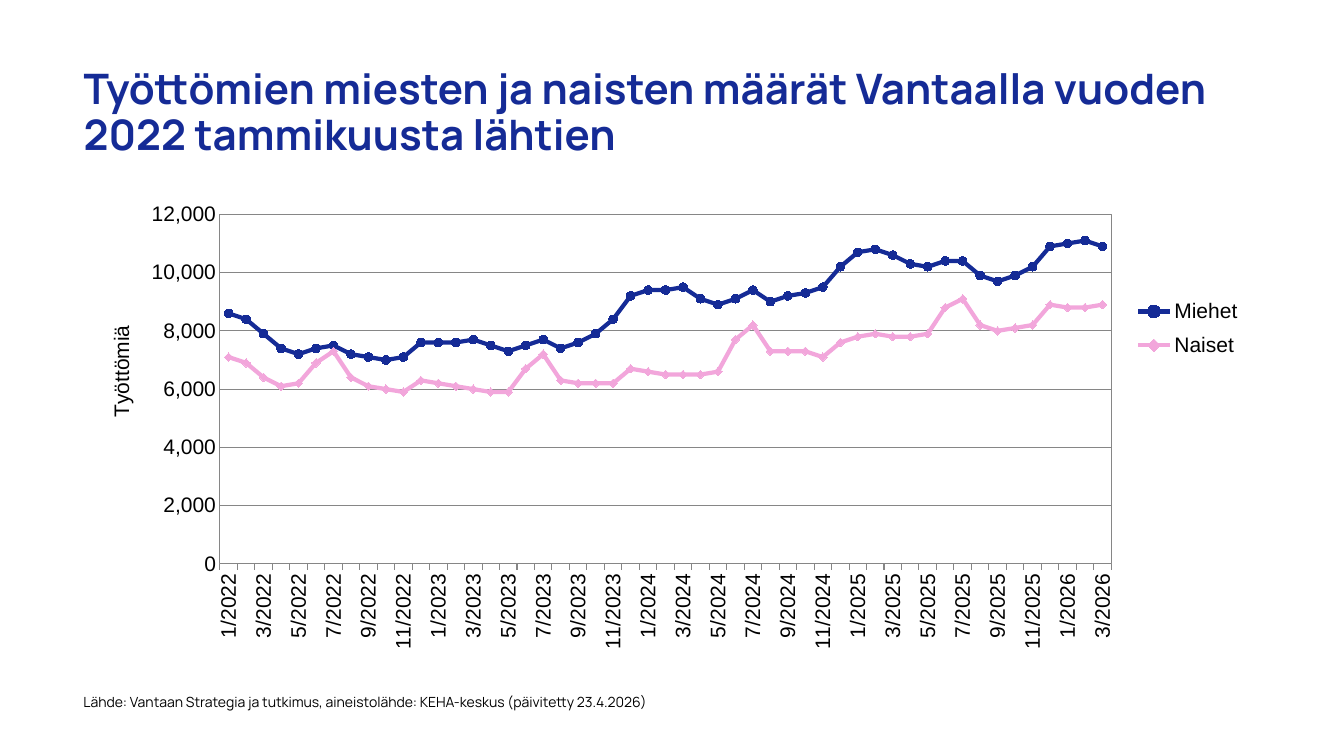
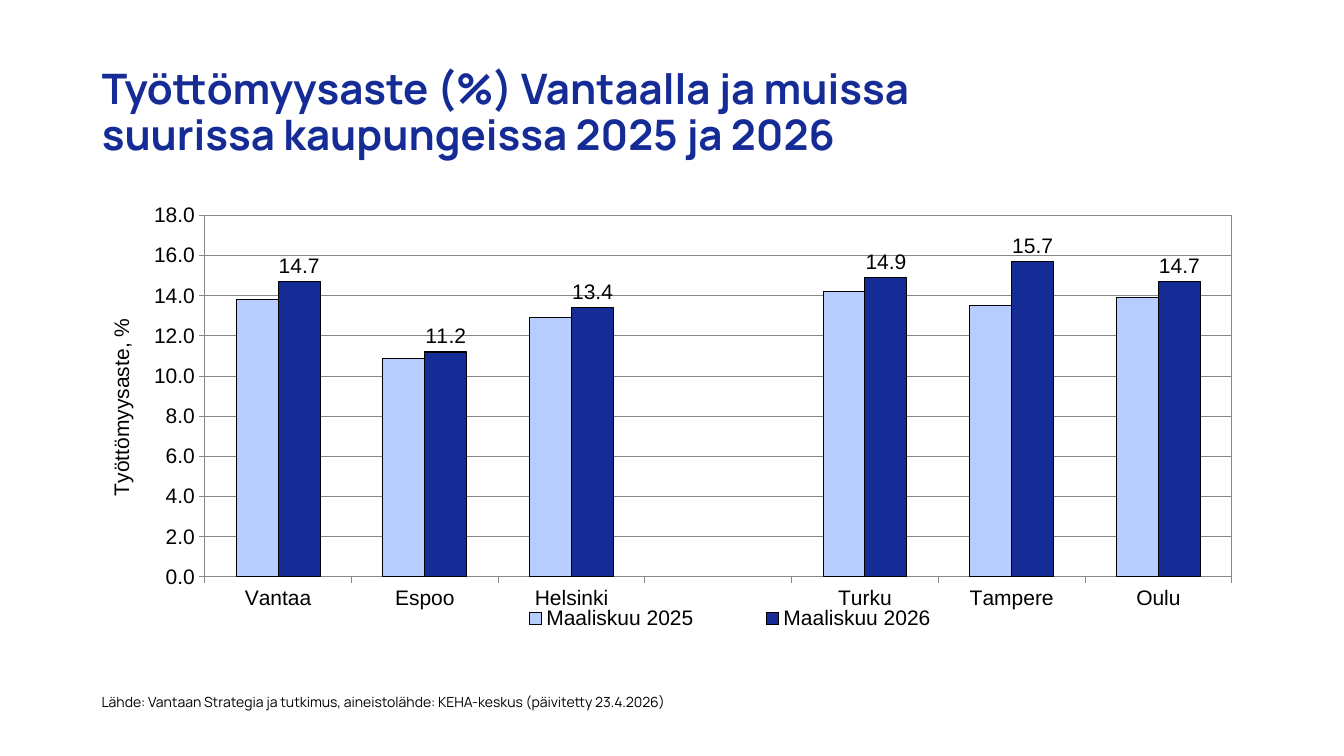
from lxml import etree
from pptx import Presentation
from pptx.chart.data import CategoryChartData
from pptx.dml.color import RGBColor
from pptx.enum.chart import (XL_CHART_TYPE, XL_LABEL_POSITION, XL_LEGEND_POSITION,
                             XL_MARKER_STYLE, XL_TICK_MARK)
from pptx.enum.text import MSO_ANCHOR, MSO_AUTO_SIZE, PP_ALIGN
from pptx.oxml import parse_xml
from pptx.oxml.ns import qn
from pptx.util import Pt

LINE = XL_CHART_TYPE.LINE_MARKERS
COLUMN = XL_CHART_TYPE.COLUMN_CLUSTERED
CIRCLE, DIAMOND = XL_MARKER_STYLE.CIRCLE, XL_MARKER_STYLE.DIAMOND
RIGHT, BOTTOM = XL_LEGEND_POSITION.RIGHT, XL_LEGEND_POSITION.BOTTOM
OUTSIDE, NO_TICK = XL_TICK_MARK.OUTSIDE, XL_TICK_MARK.NONE

BLUE = RGBColor(0x15, 0x2B, 0x96)
PINK = RGBColor(0xF2, 0xA6, 0xDB)
LIGHT_BLUE = RGBColor(0xB8, 0xCD, 0xFF)
GRAY = RGBColor(0x86, 0x86, 0x86)
BLACK = RGBColor(0, 0, 0)

TEXT_FONT, CHART_FONT = "Manrope", "Arial"
CHART_LEFT, CHART_WIDTH, CHART_HEIGHT = 66, 828, 328.5
SOURCE = "Lähde: Vantaan Strategia ja tutkimus, aineistolähde: KEHA-keskus (päivitetty 23.4.2026)"
NS = ('xmlns:c="http://schemas.openxmlformats.org/drawingml/2006/chart" '
      'xmlns:a="http://schemas.openxmlformats.org/drawingml/2006/main"')

MONTHS = [f"{i % 12 + 1}/{2022 + i // 12}" for i in range(51)]
MEN = [8600, 8400, 7900, 7400, 7200, 7400, 7500, 7200, 7100, 7000, 7100, 7600,
       7600, 7600, 7700, 7500, 7300, 7500, 7700, 7400, 7600, 7900, 8400, 9200,
       9400, 9400, 9500, 9100, 8900, 9100, 9400, 9000, 9200, 9300, 9500, 10200,
       10700, 10800, 10600, 10300, 10200, 10400, 10400, 9900, 9700, 9900, 10200, 10900,
       11000, 11100, 10900]
WOMEN = [7100, 6900, 6400, 6100, 6200, 6900, 7300, 6400, 6100, 6000, 5900, 6300,
         6200, 6100, 6000, 5900, 5900, 6700, 7200, 6300, 6200, 6200, 6200, 6700,
         6600, 6500, 6500, 6500, 6600, 7700, 8200, 7300, 7300, 7300, 7100, 7600,
         7800, 7900, 7800, 7800, 7900, 8800, 9100, 8200, 8000, 8100, 8200, 8900,
         8800, 8800, 8900]
CITIES = ["Vantaa", "Espoo", "Helsinki", "", "Turku", "Tampere", "Oulu"]
RATES_2025 = [13.8, 10.9, 12.9, None, 14.2, 13.5, 13.9]
RATES_2026 = [14.7, 11.2, 13.4, None, 14.9, 15.7, 14.7]


def set_font(font, name, size, color, bold=False):
    font.name, font.size, font.bold = name, Pt(size), bold
    font.color.rgb = color


def set_line(line, color, width):
    line.color.rgb = color
    line.width = Pt(width)


def add_slide(prs, left, title):
    s = prs.slides.add_slide(prs.slide_layouts[5])
    sp = s.shapes.title
    sp.left, sp.top, sp.width, sp.height = Pt(left), Pt(29), Pt(828), Pt(104.5)
    tf = sp.text_frame
    tf.text = title
    tf.auto_size = MSO_AUTO_SIZE.NONE
    tf.vertical_anchor = MSO_ANCHOR.MIDDLE
    p = tf.paragraphs[0]
    p.alignment = PP_ALIGN.LEFT
    p.line_spacing = 0.9
    set_font(p.font, TEXT_FONT, 30, BLUE, bold=True)

    tf = s.shapes.add_textbox(Pt(left), Pt(492), Pt(500), Pt(30)).text_frame
    tf.word_wrap = True
    tf.text = SOURCE
    set_font(tf.paragraphs[0].font, TEXT_FONT, 10, BLACK)
    return s


def place(element, index, x, y, w=None, h=None, inner=False):
    for old in element.findall(qn("c:layout")):
        element.remove(old)
    layout = parse_xml(f"<c:layout {NS}><c:manualLayout/></c:layout>")
    values = [("layoutTarget", "inner")] if inner else []
    values += [("xMode", "edge"), ("yMode", "edge"), ("x", x), ("y", y)]
    if w:
        values += [("w", w), ("h", h)]
    for tag, value in values:
        etree.SubElement(layout[0], qn(f"c:{tag}")).set("val", str(value))
    element.insert(index, layout)


def add_chart(s, kind, top, cats, series, number_format, plot_box):
    data = CategoryChartData(number_format=number_format)
    data.categories = cats
    for name, values in series:
        data.add_series(name, values)
    chart = s.shapes.add_chart(kind, Pt(CHART_LEFT), Pt(top), Pt(CHART_WIDTH),
                               Pt(CHART_HEIGHT), data).chart
    chart.has_title = False
    set_font(chart.font, CHART_FONT, 15, BLACK)
    plot_area = chart.plots[0]._element.getparent()
    place(plot_area, 0, *plot_box, inner=True)
    plot_area.append(parse_xml(
        f'<c:spPr {NS}><a:noFill/><a:ln w="{Pt(0.75)}"><a:solidFill>'
        f'<a:srgbClr val="{GRAY}"/></a:solidFill></a:ln></c:spPr>'))
    chart.plots[0].vary_by_categories = False
    chart.category_axis.major_tick_mark = OUTSIDE
    set_line(chart.category_axis.format.line, GRAY, 0.75)
    return chart


def style_value_axis(axis, title, title_y, number_format, tick):
    axis.major_tick_mark = tick
    axis.has_major_gridlines = True
    set_line(axis.major_gridlines.format.line, GRAY, 0.75)
    axis.tick_labels.number_format = number_format
    axis.tick_labels.number_format_is_linked = False
    tf = axis.axis_title.text_frame
    tf.text = title
    set_font(tf.paragraphs[0].font, CHART_FONT, 15, BLACK)
    element = axis.axis_title._element
    body = element.find(".//" + qn("a:bodyPr"))
    body.set("rot", "-5400000")
    body.set("vert", "horz")
    place(element, 1, 0.01, title_y)


def add_legend(chart, position, box):
    chart.has_legend = True
    chart.legend.position = position
    chart.legend.include_in_layout = False
    set_font(chart.legend.font, CHART_FONT, 15, BLACK)
    place(chart.legend._element, 1, *box)


def label_every_other(axis):
    set_font(axis.tick_labels.font, CHART_FONT, 15, BLACK)
    element = axis._element
    body = element.find(qn("c:txPr")).find(qn("a:bodyPr"))
    body.set("rot", "-5400000")
    body.set("vert", "horz")
    last = element.find(qn("c:noMultiLvlLbl"))
    for tag, step in (("tickLblSkip", 2), ("tickMarkSkip", 1)):
        last.addprevious(parse_xml(f'<c:{tag} {NS} val="{step}"/>'))


def add_gender_chart(s):
    chart = add_chart(s, LINE, 141, MONTHS, [("Miehet", MEN), ("Naiset", WOMEN)],
                      "#,##0", (0.11, 0.037, 0.769, 0.76))
    label_every_other(chart.category_axis)
    axis = chart.value_axis
    style_value_axis(axis, "Työttömiä", 0.27, "#,##0", NO_TICK)
    axis.minimum_scale, axis.maximum_scale, axis.major_unit = 0, 12000, 2000
    axis.format.line.fill.background()
    add_legend(chart, RIGHT, (0.89, 0.2, 0.11, 0.17))
    for line, color, shape in zip(chart.series, (BLUE, PINK), (CIRCLE, DIAMOND)):
        line.smooth = False
        set_line(line.format.line, color, 3)
        marker = line.marker
        marker.style, marker.size = shape, 6
        marker.format.fill.solid()
        marker.format.fill.fore_color.rgb = color
        set_line(marker.format.line, color, 0.75)


def add_city_chart(s):
    chart = add_chart(s, COLUMN, 139.5, CITIES,
                      [("Maaliskuu 2025", RATES_2025), ("Maaliskuu 2026", RATES_2026)],
                      "0.0", (0.097, 0.044, 0.886, 0.786))
    axis = chart.value_axis
    style_value_axis(axis, "Työttömyysaste, %", 0.26, "0.0", OUTSIDE)
    axis.minimum_scale, axis.maximum_scale, axis.major_unit = 0, 18, 2
    set_line(axis.format.line, GRAY, 0.75)
    add_legend(chart, BOTTOM, (0.32, 0.88, 0.46, 0.08))
    plot = chart.plots[0]
    plot.gap_width, plot.overlap = 150, 0
    for bars, color in zip(chart.series, (LIGHT_BLUE, BLUE)):
        bars.format.fill.solid()
        bars.format.fill.fore_color.rgb = color
        set_line(bars.format.line, BLACK, 0.75)
    labels = plot.series[1].data_labels
    labels.show_value = True
    labels.position = XL_LABEL_POSITION.OUTSIDE_END
    labels.number_format = "0.0"
    labels.number_format_is_linked = False
    set_font(labels.font, CHART_FONT, 15, BLACK)


def main():
    prs = Presentation()
    prs.slide_width, prs.slide_height = Pt(960), Pt(540)
    add_gender_chart(add_slide(
        prs, 52.5,
        "Työttömien miesten ja naisten määrät Vantaalla vuoden 2022 tammikuusta lähtien"))
    add_city_chart(add_slide(
        prs, 65.5,
        "Työttömyysaste (%) Vantaalla ja muissa\vsuurissa kaupungeissa 2025 ja 2026"))
    prs.save("out.pptx")


if __name__ == "__main__":
    main()
